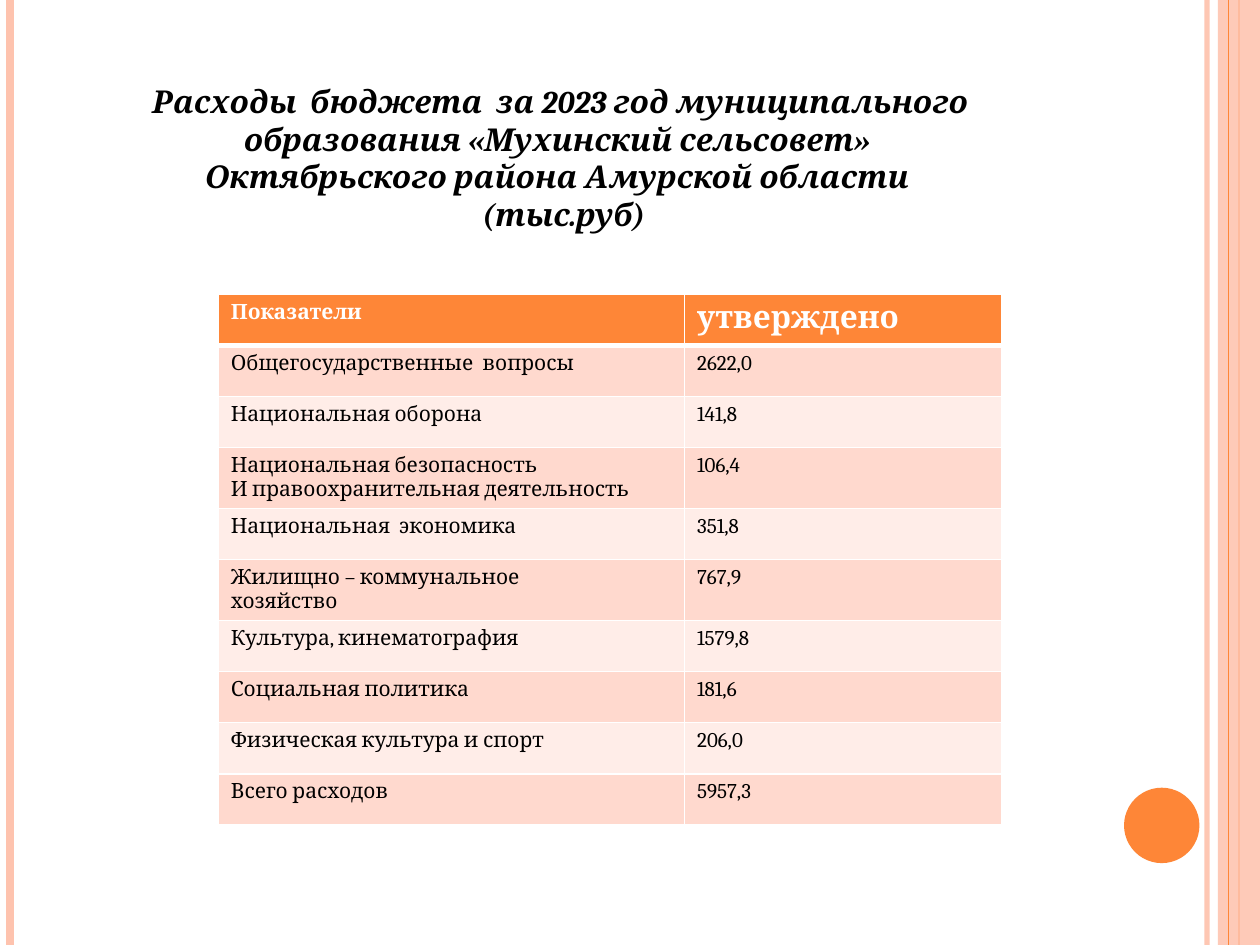
import pptx
import pptx.util
import pptx.dml.color
import pptx.enum.shapes
import pptx.enum.text
from lxml import etree
from pptx.oxml.ns import qn

Cm, Pt = pptx.util.Cm, pptx.util.Pt
Kind = pptx.enum.shapes.MSO_SHAPE
WIDE, HIGH = 25.4, 19.05


def color(text):
    return pptx.dml.color.RGBColor.from_string(text)


def fade(fill, part):
    """Set the opacity, in percent, of a solid fill element."""
    tone = fill.find(qn("a:srgbClr"))
    etree.SubElement(tone, qn("a:alpha")).set("val", str(part * 1000))


class Deck:
    font = "Cambria"
    accent, pale = "FE8637", "FEC3AE"
    bands = ("FFEDE8", "FFD9CE")
    dark, light = "000000", "FFFFFF"

    def __init__(self):
        self.file = pptx.Presentation()
        self.file.slide_width, self.file.slide_height = Cm(WIDE), Cm(HIGH)
        self.slide = self.file.slides.add_slide(self.file.slide_layouts[5])

    def style(self, para, size, tone, bold=False, slant=False):
        font = para.font
        font.name, font.size = self.font, Pt(size)
        font.bold, font.italic = bold, slant
        font.color.rgb = color(tone)

    def rule(self, x, tone, width, part=100):
        """Draw a full-height vertical line."""
        line = self.slide.shapes.add_connector(
            pptx.enum.shapes.MSO_CONNECTOR.STRAIGHT, Cm(x), 0, Cm(x), Cm(HIGH))
        line.line.color.rgb = color(tone)
        line.line.width = Pt(width)
        props = line._element.spPr
        if part < 100:
            fade(props.find(qn("a:ln")).find(qn("a:solidFill")), part)
        etree.SubElement(props, qn("a:effectLst"))

    def shape(self, kind, box, tone, part=100):
        item = self.slide.shapes.add_shape(kind, *map(Cm, box))
        item.shadow.inherit = False
        item.fill.solid()
        item.fill.fore_color.rgb = color(tone)
        item.line.fill.background()
        if part < 100:
            fade(item._element.spPr.find(qn("a:solidFill")), part)

    def title(self, text, box):
        item = self.slide.shapes.title
        item.left, item.top, item.width, item.height = map(Cm, box)
        frame = item.text_frame
        frame.text = text
        frame.word_wrap = True
        frame.auto_size = pptx.enum.text.MSO_AUTO_SIZE.NONE
        frame.vertical_anchor = pptx.enum.text.MSO_ANCHOR.TOP
        para = frame.paragraphs[0]
        para.alignment = pptx.enum.text.PP_ALIGN.CENTER
        self.style(para, 18, self.dark, bold=True, slant=True)

    def edge(self, cell, head):
        """Give a cell white borders, thicker below the header."""
        props = cell._tc.get_or_add_tcPr()
        for spot, side in enumerate("LRTB"):
            width = Pt(3 if head and side == "B" else 1)
            line = etree.Element(qn("a:ln" + side), w=str(int(width)))
            fill = etree.SubElement(line, qn("a:solidFill"))
            etree.SubElement(fill, qn("a:srgbClr")).set("val", self.light)
            props.insert(spot, line)

    def table(self, rows, left, top, cols, step):
        item = self.slide.shapes.add_table(
            len(rows), len(cols), Cm(left), Cm(top),
            Cm(sum(cols)), Cm(step * len(rows)))
        grid = item.table
        for col, width in zip(grid.columns, cols):
            col.width = Cm(width)
        for i, row in enumerate(rows):
            grid.rows[i].height = Cm(step)
            head = i == 0
            for j, text in enumerate(row):
                cell = grid.cell(i, j)
                cell.text = text
                cell.fill.solid()
                cell.fill.fore_color.rgb = color(
                    self.accent if head else self.bands[i % 2])
                self.edge(cell, head)
                size = 18 if head and j == 1 else 12
                for para in cell.text_frame.paragraphs:
                    self.style(para, size,
                               self.light if head else self.dark, bold=head)


def main():
    deck = Deck()

    # Side stripes and circle
    deck.rule(24.33, deck.pale, 3, 93)
    deck.rule(0.21, deck.pale, 4.5)
    deck.rule(24.98, deck.accent, 1.5)
    deck.shape(Kind.RECTANGLE, (24.55, 0, 0.85, HIGH), deck.pale, 87)
    deck.rule(24.77, deck.accent, 0.75)
    deck.shape(Kind.OVAL, (22.66, 15.88, 1.52, 1.52), deck.accent)

    # Title
    deck.title("Расходы  бюджета  за 2023 год муниципального образования "
               "«Мухинский сельсовет» \vОктябрьского района Амурской области "
               "\v (тыс.руб)", (1.7, 1.52, 19.2, 3.33))

    # Budget table
    rows = [
        ("Показатели", "утверждено"),
        ("Общегосударственные  вопросы", "2622,0"),
        ("Национальная оборона", "141,8"),
        ("Национальная безопасность\nИ правоохранительная деятельность",
         "106,4"),
        ("Национальная  экономика", "351,8"),
        ("Жилищно – коммунальное\nхозяйство", "767,9"),
        ("Культура, кинематография", "1579,8"),
        ("Социальная политика", "181,6"),
        ("Физическая культура и спорт", "206,0"),
        ("Всего расходов", "5957,3"),
    ]
    deck.table(rows, 4.4, 5.93, (9.4, 6.4), 1.03)

    deck.file.save("out.pptx")


if __name__ == "__main__":
    main()
